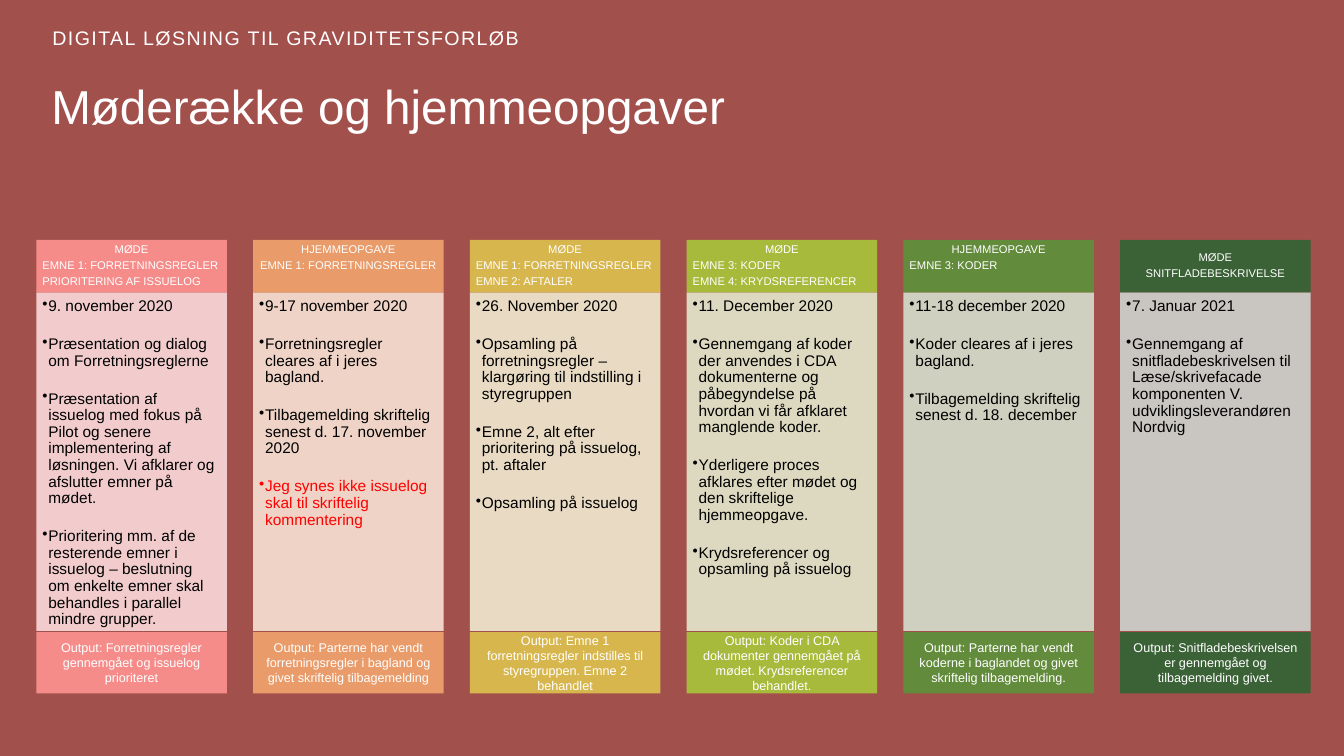
from dataclasses import dataclass
from typing import NamedTuple

from lxml.etree import SubElement
from pptx import Presentation
from pptx.dml.color import RGBColor as RGB
from pptx.enum.shapes import MSO_SHAPE as SHAPE
from pptx.enum.text import MSO_ANCHOR as ANCHOR, MSO_AUTO_SIZE as AUTO_SIZE, PP_ALIGN as ALIGN
from pptx.oxml.ns import qn
from pptx.util import Inches, Pt


@dataclass(frozen=True)
class Theme:
    font: str = "Arial"
    backdrop: str = "A2504C"
    light: str = "FFFFFF"
    dark: str = "000000"
    remark: str = "FF0000"
    title_size: int = 34
    eyebrow_size: int = 14
    body_size: int = 11
    output_size: int = 9
    header_size: int = 8
    body_opacity: int = 90
    line_spacing: float = 0.9


class Box(NamedTuple):
    left: float
    top: float
    width: float
    height: float

    def emu(self):
        return [Inches(length) for length in self]


class Step(NamedTuple):
    colour: str
    tint: str
    kind: str
    topics: list
    topic_align: ALIGN
    anchor: ANCHOR
    tasks: list
    output: str


THEME = Theme()
SLIDE_W, SLIDE_H = 13.33, 7.5
TITLE_BOX = Box(0.51, 0.83, 7.44, 1.06)
EYEBROW_BOX = Box(0.52, 0, 5.98, 0.49)
STEPS_LEFT, STEPS_TOP = 0.36, 2.38
STEP_W, STEP_PITCH = 1.89, 2.15
HEADER_H, BODY_H, OUTPUT_GAP, OUTPUT_H = 0.52, 3.36, 0.01, 0.61
STEPS_H = HEADER_H + BODY_H + OUTPUT_GAP + OUTPUT_H
REMARK = "Jeg synes ikke issuelog skal til skriftelig kommentering"

STEPS = [
    Step("F68C8A", "FBDADA", "MØDE",
         ["EMNE 1: FORRETNINGSREGLER", "PRIORITERING AF ISSUELOG"], ALIGN.LEFT, ANCHOR.TOP,
         ["9. november 2020",
          "Præsentation og dialog om Forretningsreglerne",
          "Præsentation af issuelog med fokus på Pilot og senere implementering af løsningen. "
          "Vi afklarer og afslutter emner på mødet.",
          "Prioritering mm. af de resterende emner i issuelog – beslutning om enkelte emner "
          "skal behandles i parallel mindre grupper."],
         "Output: Forretningsregler gennemgået og issuelog prioriteret"),
    Step("E99B69", "F7E2D4", "HJEMMEOPGAVE",
         ["EMNE 1: FORRETNINGSREGLER"], ALIGN.CENTER, ANCHOR.TOP,
         ["9-17 november 2020",
          "Forretningsregler cleares af i jeres bagland.",
          "Tilbagemelding skriftelig senest d. 17. november 2020",
          REMARK],
         "Output: Parterne har vendt forretningsregler i bagland og givet skriftelig "
         "tilbagemelding"),
    Step("D7B64D", "F0E9D0", "MØDE",
         ["EMNE 1: FORRETNINGSREGLER", "EMNE 2: AFTALER"], ALIGN.LEFT, ANCHOR.TOP,
         ["26. November 2020",
          "Opsamling på forretningsregler – klargøring til indstilling i styregruppen",
          "Emne 2, alt efter prioritering på issuelog, pt. aftaler",
          "Opsamling på issuelog"],
         "Output: Emne 1 forretningsregler indstilles til styregruppen. Emne 2 behandlet"),
    Step("A8BA3B", "E4E8CE", "MØDE",
         ["EMNE 3: KODER", "EMNE 4: KRYDSREFERENCER"], ALIGN.LEFT, ANCHOR.TOP,
         ["11. December 2020",
          "Gennemgang af koder der anvendes i CDA dokumenterne og påbegyndelse på hvordan "
          "vi får afklaret manglende koder.",
          "Yderligere proces afklares efter mødet og den skriftelige hjemmeopgave.",
          "Krydsreferencer og opsamling på issuelog"],
         "Output: Koder i CDA dokumenter gennemgået på mødet. Krydsreferencer behandlet."),
    Step("628B3B", "D5DECD", "HJEMMEOPGAVE",
         ["EMNE 3: KODER"], ALIGN.LEFT, ANCHOR.TOP,
         ["11-18 december 2020",
          "Koder cleares af i jeres bagland.",
          "Tilbagemelding skriftelig senest d. 18. december"],
         "Output: Parterne har vendt koderne i baglandet og givet skriftelig tilbagemelding."),
    Step("3B6236", "CED3CE", "MØDE",
         ["SNITFLADEBESKRIVELSE"], ALIGN.CENTER, ANCHOR.MIDDLE,
         ["7. Januar 2021",
          "Gennemgang af snitfladebeskrivelsen til Læse/skrivefacade komponenten V. "
          "udviklingsleverandøren Nordvig"],
         "Output: Snitfladebeskrivelsen er gennemgået og tilbagemelding givet."),
]


def frame_text(frame, lines, anchor, insets, wrap=True):
    frame.text = "\n".join(lines)
    frame.auto_size = AUTO_SIZE.NONE
    frame.word_wrap = wrap
    frame.vertical_anchor = anchor
    (frame.margin_left, frame.margin_top,
     frame.margin_right, frame.margin_bottom) = [Inches(inset) for inset in insets]
    return frame.paragraphs


def format_line(line, size, colour, align=ALIGN.LEFT, spacing=THEME.line_spacing, after=0):
    line.alignment = align
    line.line_spacing = spacing
    line.space_before, line.space_after = Pt(0), Pt(after)
    for run in line.runs:
        run.font.name = THEME.font
        run.font.size = Pt(size)
        run.font.color.rgb = RGB.from_string(colour)


def add_bullet(line):
    props = line._p.get_or_add_pPr()
    props.set("marL", str(Inches(0.06)))
    props.set("indent", str(Inches(-0.06)))
    SubElement(props, qn("a:buChar"), char="•")


def add_panel(slide, box, colour, opacity=100):
    panel = slide.shapes.add_shape(SHAPE.RECTANGLE, *box.emu())
    panel.shadow.inherit = False
    panel.fill.solid()
    panel.fill.fore_color.rgb = RGB.from_string(colour)
    panel.line.fill.background()
    if opacity < 100:
        tint = panel._element.spPr.find(qn("a:solidFill"))[0]
        SubElement(tint, qn("a:alpha"), val=str(opacity * 1000))
    return panel


def add_heading(slide, title_box, eyebrow_box):
    # Title
    title = slide.shapes.title
    title.left, title.top, title.width, title.height = title_box.emu()
    [line] = frame_text(title.text_frame, ["Møderække og hjemmeopgaver"], ANCHOR.TOP, [0] * 4)
    format_line(line, THEME.title_size, THEME.light)
    # Line above the title
    eyebrow = slide.shapes.add_textbox(*eyebrow_box.emu())
    [line] = frame_text(eyebrow.text_frame, ["DIGITAL LØSNING TIL GRAVIDITETSFORLØB"],
                        ANCHOR.BOTTOM, [0] * 4, wrap=False)
    format_line(line, THEME.eyebrow_size, THEME.light, spacing=1.0)
    line.runs[0].font._element.set("spc", "100")


def add_step(slide, box, step):
    body_top = box.top + HEADER_H
    output_top = body_top + BODY_H + OUTPUT_GAP
    # Tasks
    body = add_panel(slide, Box(box.left, body_top, box.width, BODY_H),
                     step.tint, THEME.body_opacity)
    for line in frame_text(body.text_frame, step.tasks, ANCHOR.TOP, [0.06, 0.06, 0.09, 0.1]):
        colour = THEME.remark if line.text == REMARK else THEME.dark
        format_line(line, THEME.body_size, colour, after=15.2)
        add_bullet(line)
    # Kind of step and its topics
    header = add_panel(slide, Box(box.left, box.top, box.width, HEADER_H), step.colour)
    kind, *topics = frame_text(header.text_frame, [step.kind, *step.topics],
                               step.anchor, [0.06, 0.04, 0.06, 0.04])
    format_line(kind, THEME.header_size, THEME.light, ALIGN.CENTER, after=2.8)
    for topic in topics:
        format_line(topic, THEME.header_size, THEME.light, step.topic_align, after=2.8)
    # Output
    output = add_panel(slide, Box(box.left, output_top, box.width, OUTPUT_H), step.colour)
    [line] = frame_text(output.text_frame, [step.output], ANCHOR.MIDDLE, [0.1, 0.05, 0.1, 0.05])
    format_line(line, THEME.output_size, THEME.light, ALIGN.CENTER, spacing=1.0)


def main():
    deck = Presentation()
    deck.slide_width, deck.slide_height = Inches(SLIDE_W), Inches(SLIDE_H)
    slide = deck.slides.add_slide(deck.slide_layouts.get_by_name("Title Only"))
    slide.background.fill.solid()
    slide.background.fill.fore_color.rgb = RGB.from_string(THEME.backdrop)
    add_heading(slide, TITLE_BOX, EYEBROW_BOX)
    for column, step in enumerate(STEPS):
        left = STEPS_LEFT + column * STEP_PITCH
        add_step(slide, Box(left, STEPS_TOP, STEP_W, STEPS_H), step)
    deck.save("out.pptx")


if __name__ == "__main__":
    main()
